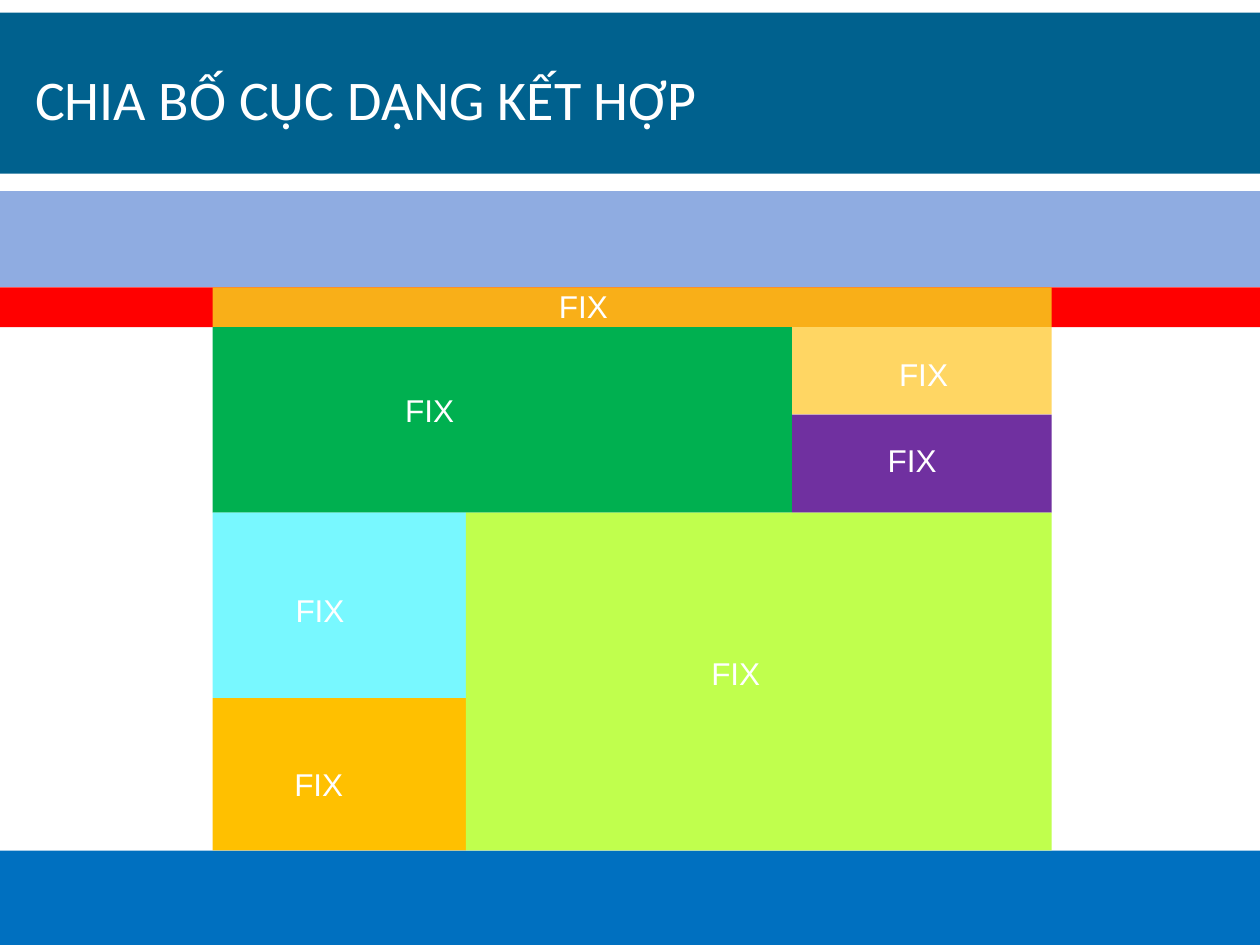
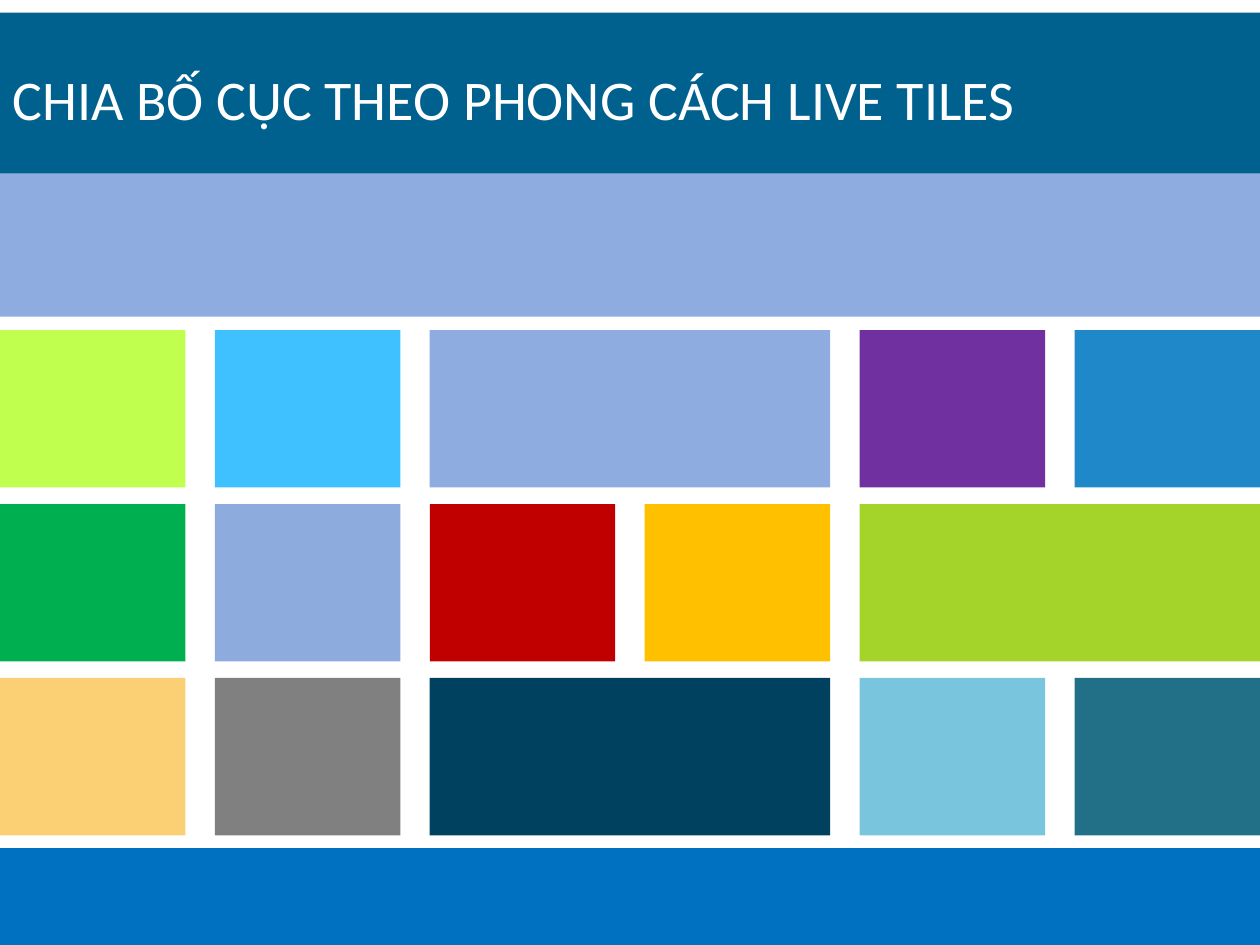
from pptx import Presentation
from pptx.dml.color import RGBColor
from pptx.enum.shapes import MSO_SHAPE
from pptx.enum.text import MSO_ANCHOR
from pptx.util import Pt

RECTANGLE = MSO_SHAPE.RECTANGLE
TOP = MSO_ANCHOR.TOP

WHITE = RGBColor(0xFF, 0xFF, 0xFF)
TITLE_BLUE = RGBColor(0x00, 0x61, 0x8E)
FOOTER_BLUE = RGBColor(0x00, 0x70, 0xC0)
PERIWINKLE = RGBColor(0x8F, 0xAC, 0xE1)
SOFT_PERIWINKLE = RGBColor(0x8E, 0xAB, 0xDE)
RED = RGBColor(0xFF, 0x00, 0x00)
DARK_RED = RGBColor(0xC0, 0x00, 0x00)
ORANGE = RGBColor(0xF9, 0xAF, 0x18)
AMBER = RGBColor(0xFF, 0xC0, 0x00)
SAND = RGBColor(0xFF, 0xD6, 0x63)
PEACH = RGBColor(0xFB, 0xCF, 0x74)
GREEN = RGBColor(0x00, 0xB0, 0x50)
LIME = RGBColor(0xC0, 0xFF, 0x4D)
OLIVE = RGBColor(0xA4, 0xD3, 0x29)
PURPLE = RGBColor(0x70, 0x30, 0xA0)
CYAN = RGBColor(0x78, 0xF8, 0xFF)
SKY = RGBColor(0x3F, 0xC1, 0xFF)
AZURE = RGBColor(0x1F, 0x88, 0xC8)
PALE_TEAL = RGBColor(0x78, 0xC5, 0xDD)
TEAL = RGBColor(0x22, 0x70, 0x88)
NAVY = RGBColor(0x00, 0x41, 0x5F)
GREY = RGBColor(0x80, 0x80, 0x80)

SLIDE_WIDTH, SLIDE_HEIGHT = 720, 540

COLUMN_EDGES = [0, 144.7, 331.2, 479.5]
ROW_EDGES = [0, 22.7, 72.7, 128.8, 234.7, 321.8]
# Each block: colour, column span, row span, label offset
FIXED_BLOCKS = [
    (ORANGE, (0, 3), (0, 1), (190.8, -3.6)),
    (GREEN, (0, 2), (1, 3), (103, 33)),
    (SAND, (2, 3), (1, 2), (54, 12.2)),
    (PURPLE, (2, 3), (2, 3), (47.5, 11.5)),
    (CYAN, (0, 1), (3, 4), (40.3, 41)),
    (AMBER, (0, 1), (4, 5), (39.6, 34.6)),
    (LIME, (1, 3), (3, 5), (133.2, 77)),
]

TILE_COLUMNS, TILE_WIDTH, TILE_HEIGHT, ROW_PITCH = 6, 106, 90, 99.4
# Each tile: colour, columns covered
TILE_ROWS = [
    [(LIME, 1), (SKY, 1), (PERIWINKLE, 2), (PURPLE, 1), (AZURE, 1)],
    [(GREEN, 1), (SOFT_PERIWINKLE, 1), (DARK_RED, 1), (AMBER, 1), (OLIVE, 2)],
    [(PEACH, 1), (GREY, 1), (NAVY, 2), (PALE_TEAL, 1), (TEAL, 1)],
]


def add_block(slide, color, left, top, width, height):
    """Draw a plain filled rectangle."""
    block = slide.shapes.add_shape(
        RECTANGLE, Pt(left), Pt(top), Pt(width), Pt(height))
    block.shadow.inherit = False
    block.fill.solid()
    block.fill.fore_color.rgb = color
    block.line.fill.background()


def add_text(slide, text, left, top, width, height, *,
             font="Arial", size=18, color=WHITE, inset_top=3.6):
    """Write one line of text in a box."""
    box = slide.shapes.add_textbox(Pt(left), Pt(top), Pt(width), Pt(height))
    frame = box.text_frame
    frame.word_wrap = True
    frame.vertical_anchor = TOP
    frame.margin_top = Pt(inset_top)
    run = frame.paragraphs[0].add_run()
    run.text = text
    run.font.name = font
    run.font.size = Pt(size)
    run.font.color.rgb = color


def add_band(slide, color, top, height):
    """Draw a band across the whole slide."""
    add_block(slide, color, 0, top, SLIDE_WIDTH, height)


def add_title(slide, title, left, width):
    """Draw the title band with its heading."""
    add_band(slide, TITLE_BLUE, 7.2, 92)
    add_text(slide, title, left, 31.7, width, 44.6,
             font="Calibri", size=32, inset_top=5)


def add_footer(slide, top):
    """Fill the slide from the given height down to its lower edge."""
    add_band(slide, FOOTER_BLUE, top, SLIDE_HEIGHT - top)


def add_fixed_layout(slide, left, top):
    """Place the fixed-width blocks on their column and row edges."""
    for color, (first, last), (upper, lower), (label_x, label_y) in FIXED_BLOCKS:
        block_left = left + COLUMN_EDGES[first]
        block_top = top + ROW_EDGES[upper]
        add_block(slide, color, block_left, block_top,
                  COLUMN_EDGES[last] - COLUMN_EDGES[first],
                  ROW_EDGES[lower] - ROW_EDGES[upper])
        add_text(slide, "FIX", block_left + label_x, block_top + label_y, 53.3, 29)


def add_live_tiles(slide, left, top, width):
    """Place rows of single and double tiles on an even grid."""
    pitch = (width - TILE_WIDTH) / (TILE_COLUMNS - 1)
    for row, tiles in enumerate(TILE_ROWS):
        column = 0
        for color, span in tiles:
            add_block(slide, color, left + column * pitch, top + row * ROW_PITCH,
                      TILE_WIDTH + (span - 1) * pitch, TILE_HEIGHT)
            column += span


def build_combined_slide(slide):
    """Build the slide on the combined layout."""
    add_title(slide, "CHIA BỐ CỤC DẠNG KẾT HỢP", 13, 571.7)
    add_band(slide, PERIWINKLE, 109.2, 55)
    add_band(slide, RED, 164.2, 22.7)
    add_footer(slide, 486)
    add_fixed_layout(slide, 121.5, 164.2)


def build_live_tiles_slide(slide):
    """Build the slide on the live tiles layout."""
    add_title(slide, "CHIA BỐ CỤC THEO PHONG CÁCH LIVE TILES", 0, 622.8)
    add_band(slide, PERIWINKLE, 99.4, 81.6)
    add_footer(slide, 484.6)
    add_live_tiles(slide, 0, 188.6, SLIDE_WIDTH)


def main():
    """Build both slides and save the file."""
    deck = Presentation()
    deck.slide_width, deck.slide_height = Pt(SLIDE_WIDTH), Pt(SLIDE_HEIGHT)
    blank = deck.slide_layouts[6]
    for build in (build_combined_slide, build_live_tiles_slide):
        build(deck.slides.add_slide(blank))
    deck.save("out.pptx")


if __name__ == "__main__":
    main()
